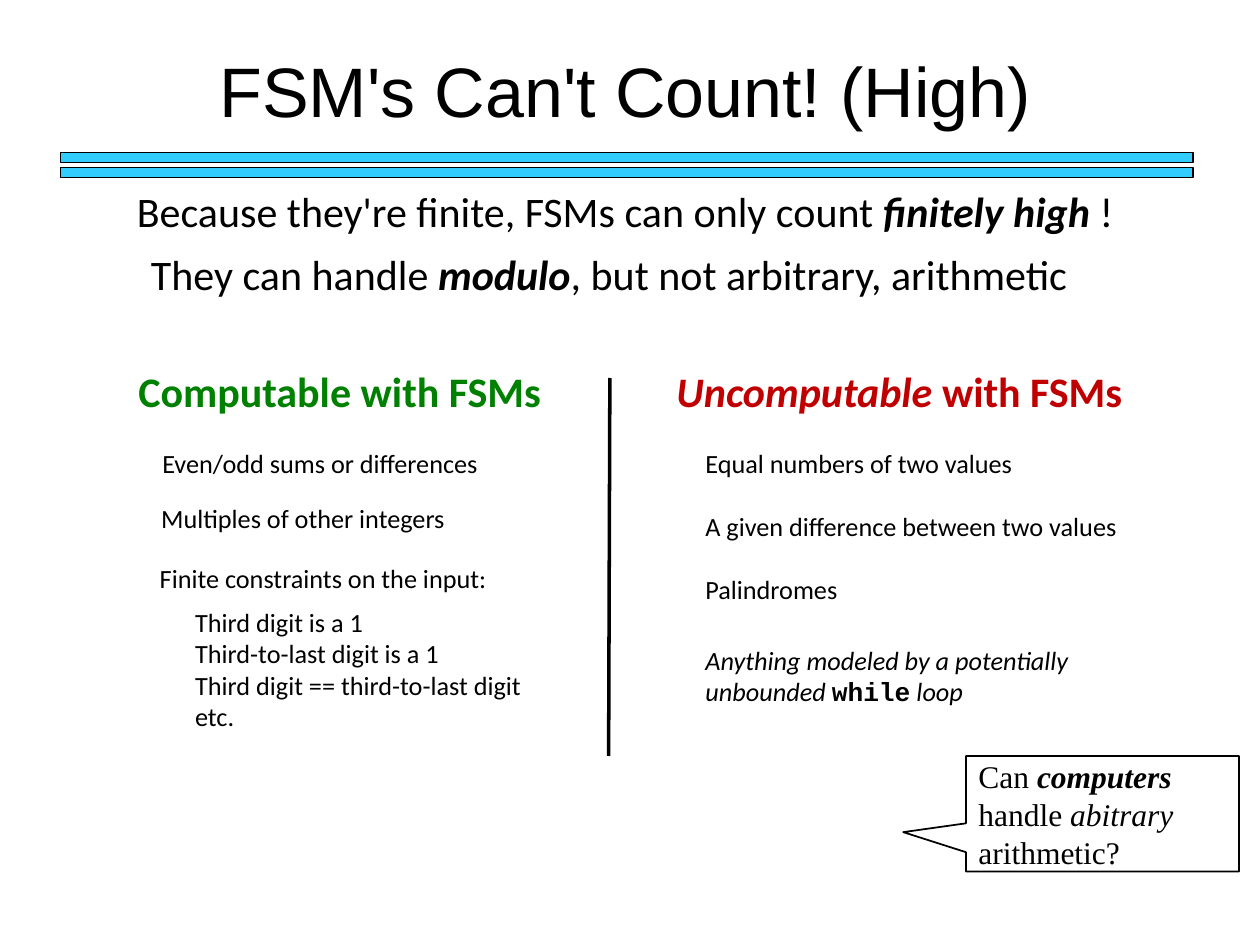
import pptx
import pptx.util
import pptx.dml.color
import pptx.enum.shapes
import pptx.enum.text
import pptx.oxml.ns
import lxml.etree

Pt = pptx.util.Pt
SHAPES = pptx.enum.shapes.MSO_SHAPE
CENTER = pptx.enum.text.PP_ALIGN.CENTER
LEFT = pptx.enum.text.PP_ALIGN.LEFT

COLORS = {"ink": "000000", "bar": "33CCFF", "can": "008000", "cannot": "C00000"}

HEADLINES = [
    ((37.4, 23.8, 640, 55.4), 40, "Arial", [("FSM's Can't Count! (High)", "")]),
    ((66.2, 102.2, 582, 36.7), 24, "Calibri",
     [("Because they're finite, FSMs can only count ", ""), ("finitely high", "bi"), (" !", "")]),
    ((59.8, 138.2, 582, 36.7), 24, "Calibri",
     [("They can handle ", ""), ("modulo", "bi"), (", but not arbitrary, arithmetic ", "")]),
]
HEADINGS = [
    (72, 247, "can", [("Computable with FSMs", "b")]),
    (379.5, 271.5, "cannot", [("Uncomputable ", "bi"), ("with FSMs", "b")]),
]
COMPUTABLE = [
    (85.7, 252, 200, ["Even/odd sums or differences"]),
    (85, 283.7, 177, ["Multiples of other integers"]),
    (84.2, 317.5, 203, ["Finite constraints on the input:"]),
    (104.4, 342.7, 203, ["Third digit is a 1", "Third-to-last digit is a 1",
                         "Third digit == third-to-last digit", "etc."]),
]
UNCOMPUTABLE = [
    (192, "Equal numbers of two values"),
    (250.5, "A given difference between two values"),
    (91.5, "Palindromes"),
]
UNCOMPUTABLE_LEFT, UNCOMPUTABLE_TOP, UNCOMPUTABLE_STEP = 396, 252, 36
WHILE_LOOP = [("Anything modeled by a potentially unbounded ", "i"),
              ("while", "b", "Courier New"), (" loop", "i")]
QUESTION = [("Can ", ""), ("computers", "bi"), (" handle ", ""),
            ("abitrary ", "i"), ("arithmetic?", "")]
BAR_TOPS = [87.1, 95.6]


def rgb(name):
    return pptx.dml.color.RGBColor.from_string(COLORS[name])


def write(frame, paragraphs, size, font, color="ink", align=LEFT):
    for index, runs in enumerate(paragraphs):
        paragraph = frame.add_paragraph() if index else frame.paragraphs[0]
        paragraph.alignment = align
        for text, style, *other_font in runs:
            run = paragraph.add_run()
            run.text = text
            run.font.name = other_font[0] if other_font else font
            run.font.size = Pt(size)
            run.font.bold = "b" in style
            run.font.italic = "i" in style
            run.font.color.rgb = rgb(color)


def add_text(box, paragraphs, size, font="Calibri", color="ink", align=LEFT, wrap=False):
    frame = slide.shapes.add_textbox(*map(Pt, box)).text_frame
    frame.word_wrap = wrap
    write(frame, paragraphs, size, font, color, align)


def add_outlined(kind, box, width):
    shape = slide.shapes.add_shape(kind, *map(Pt, box))
    shape.shadow.inherit = False
    shape.line.color.rgb = rgb("ink")
    shape.line.width = Pt(width)
    return shape


deck = pptx.Presentation()
deck.slide_width, deck.slide_height = Pt(720), Pt(540)
slide = deck.slides.add_slide(deck.slide_layouts[6])

for top in BAR_TOPS:
    bar = add_outlined(SHAPES.RECTANGLE, (34.5, top, 647.3, 5.8), 0.75)
    bar.fill.solid()
    bar.fill.fore_color.rgb = rgb("bar")

for box, size, font, runs in HEADLINES:
    add_text(box, [runs], size, font, align=CENTER, wrap=True)

for left, width, color, runs in HEADINGS:
    add_text((left, 205.2, width, 36.7), [runs], 24, color=color)

divider = slide.shapes.add_connector(
    pptx.enum.shapes.MSO_CONNECTOR.STRAIGHT, Pt(348.5), Pt(216), Pt(347.8), Pt(432))
divider.line.color.rgb = rgb("ink")
divider.line.width = Pt(2)
lxml.etree.SubElement(divider.element.spPr, pptx.oxml.ns.qn("a:effectLst"))

for left, top, width, lines in COMPUTABLE:
    add_text((left, top, width, 7.2 + 18.2 * len(lines)), [[(line, "")] for line in lines], 15)

for row, (width, line) in enumerate(UNCOMPUTABLE):
    top = UNCOMPUTABLE_TOP + row * UNCOMPUTABLE_STEP
    add_text((UNCOMPUTABLE_LEFT, top, width, 25.4), [[(line, "")]], 15)
add_text((UNCOMPUTABLE_LEFT, 364.4, 228, 43.6), [WHILE_LOOP], 15, wrap=True)

callout = add_outlined(SHAPES.RECTANGULAR_CALLOUT, (552, 432, 156, 66), 1)
callout.adjustments[0], callout.adjustments[1] = -0.73, 0.16
callout.fill.background()
callout.text_frame.word_wrap = True
callout.text_frame.vertical_anchor = pptx.enum.text.MSO_ANCHOR.MIDDLE
write(callout.text_frame, [QUESTION], 18, "Times New Roman")

deck.save("out.pptx")
